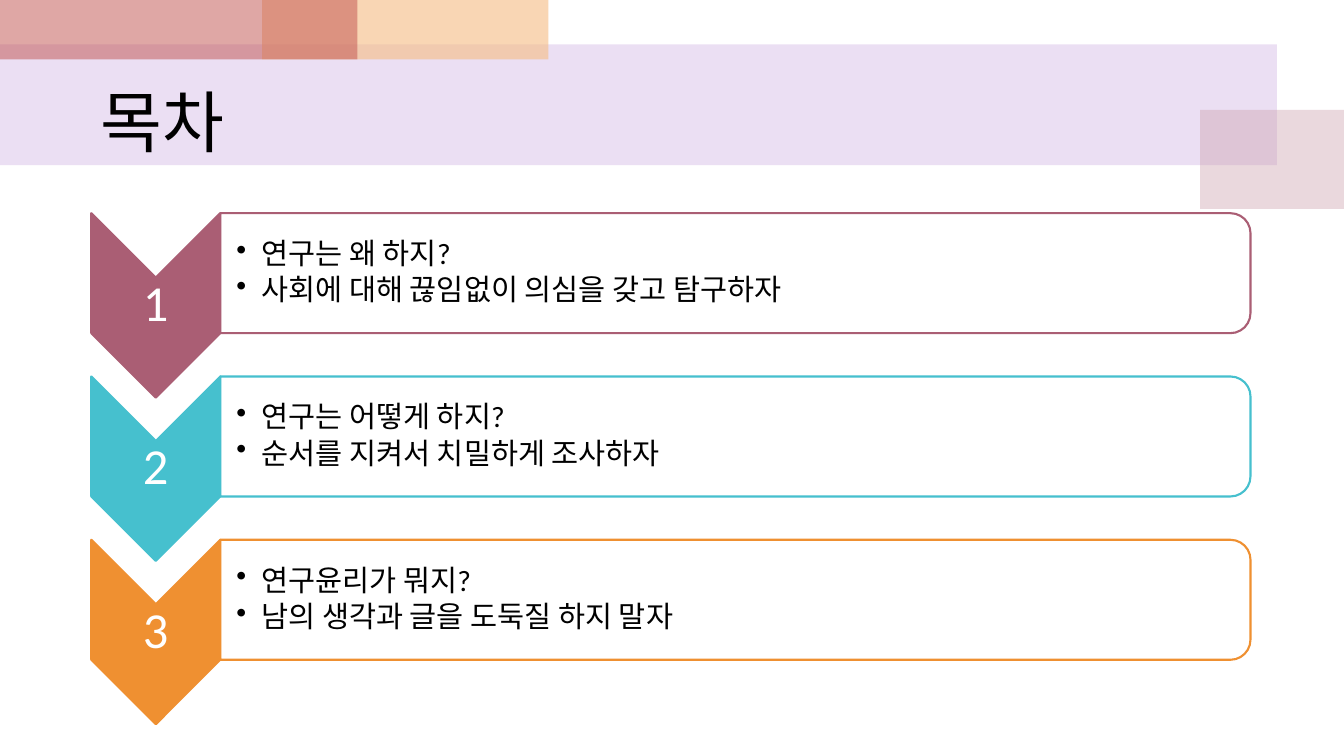
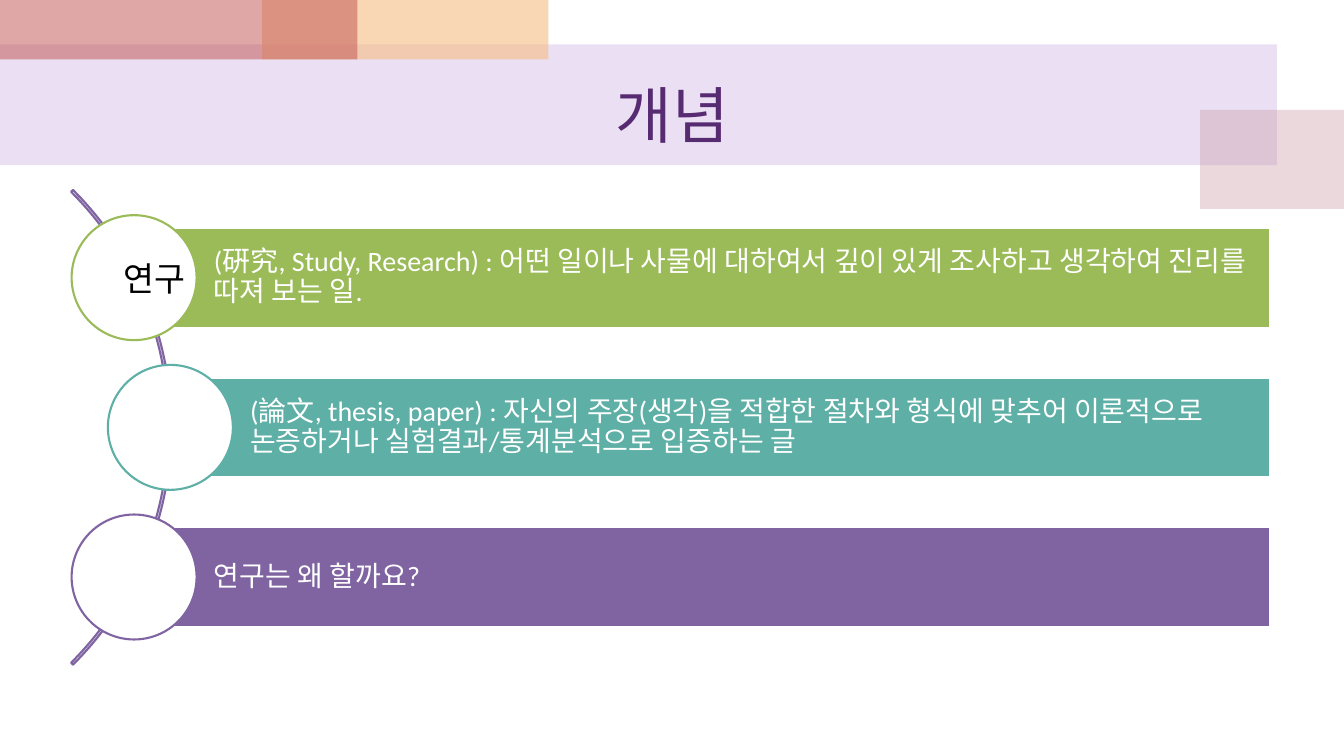
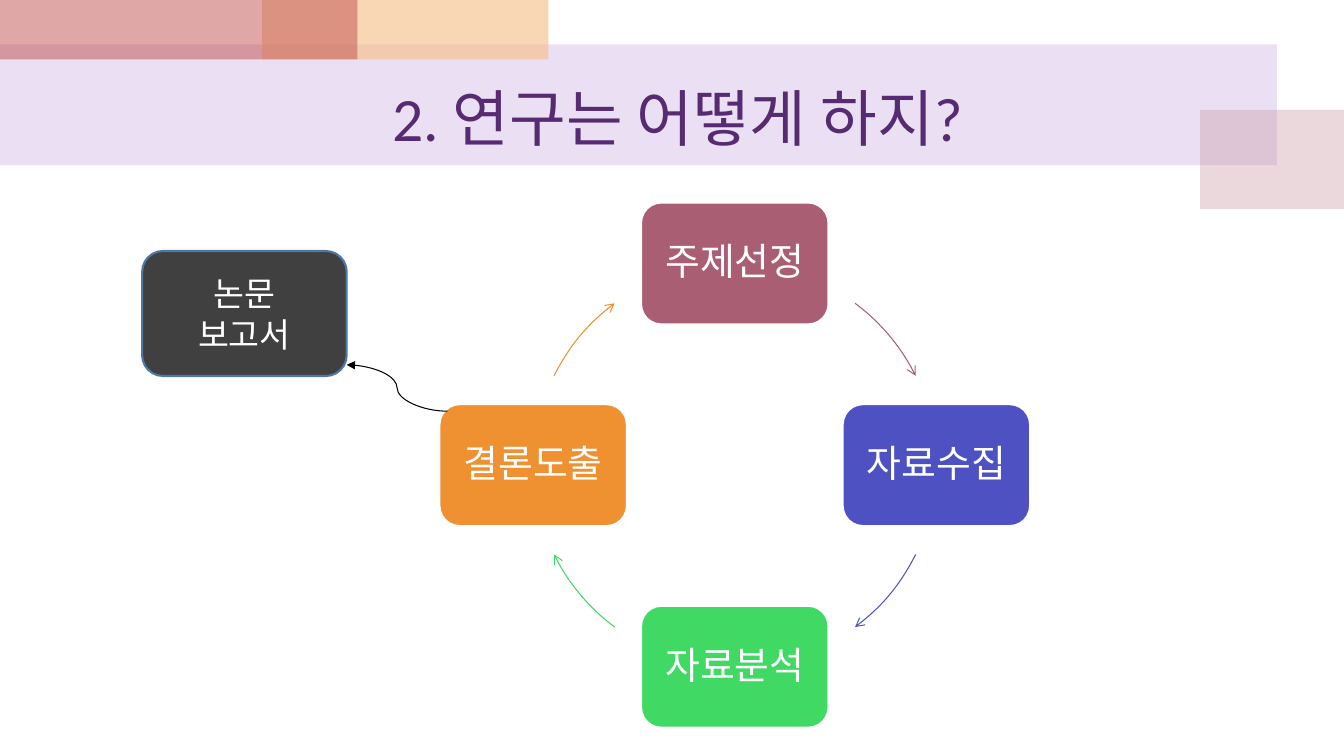
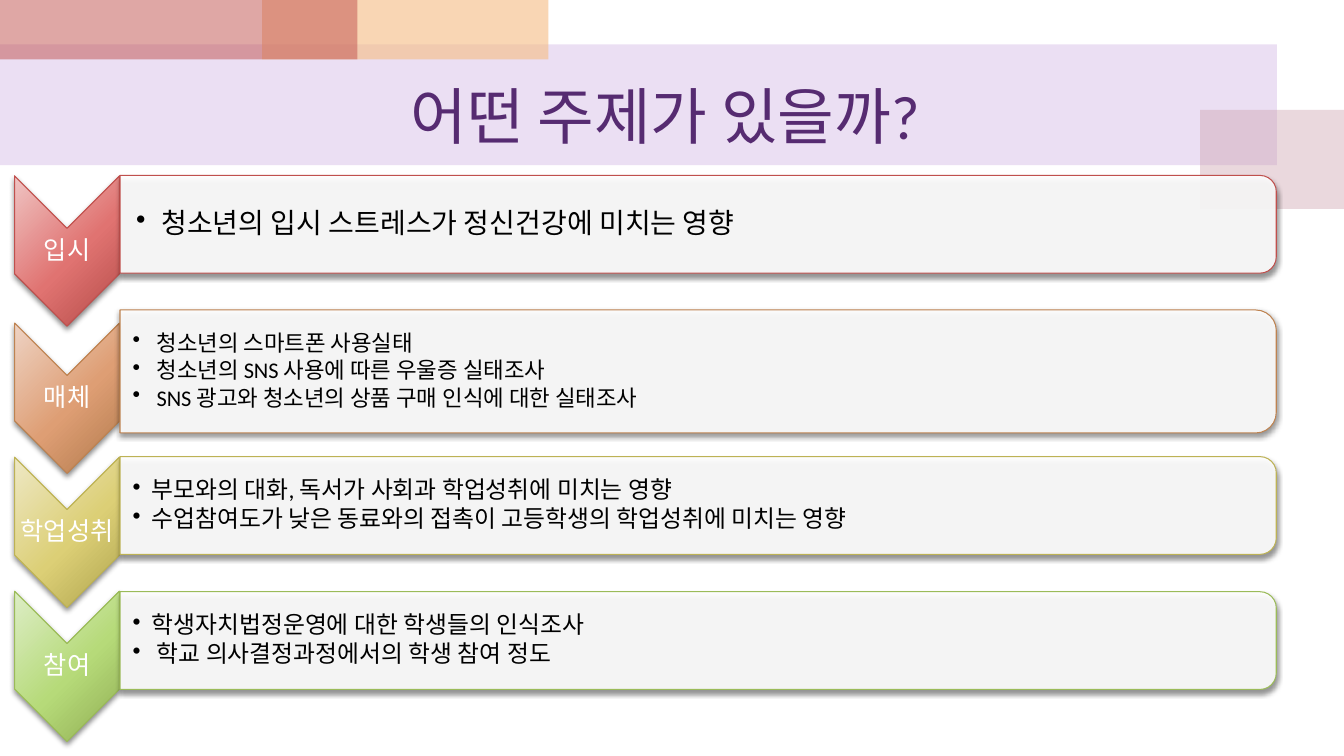
"""Build a four-slide Korean lesson on why and how to do research."""
from pptx import Presentation
from pptx import util as u
from pptx.dml.color import RGBColor
from pptx.enum import shapes, text
from pptx.oxml import parse_xml
from pptx.oxml.ns import nsdecls, qn

BLACK = RGBColor(0x00, 0x00, 0x00)
WHITE = RGBColor(0xFF, 0xFF, 0xFF)
CHARCOAL = RGBColor(0x40, 0x40, 0x40)
STEEL = RGBColor(0x4F, 0x78, 0xA5)
PLUM = RGBColor(0x56, 0x2B, 0x71)
LILAC = RGBColor(0xBF, 0x98, 0xD8)
ROSE = RGBColor(0xCC, 0x9E, 0xAC)
PEACH = RGBColor(0xF5, 0xBC, 0x83)
RED = RGBColor(0xC0, 0x50, 0x4D)
WINE = RGBColor(0xAA, 0x5E, 0x74)
CYAN = RGBColor(0x46, 0xC0, 0xCE)
ORANGE = RGBColor(0xEF, 0x90, 0x31)
OLIVE = RGBColor(0x9B, 0xBB, 0x59)
TEAL = RGBColor(0x5E, 0xAF, 0xA6)
PURPLE = RGBColor(0x80, 0x64, 0xA2)
INDIGO = RGBColor(0x4E, 0x51, 0xC2)
GREEN = RGBColor(0x3F, 0xD9, 0x63)
BROWN = RGBColor(0xBE, 0x83, 0x51)
MUSTARD = RGBColor(0xBD, 0xB2, 0x55)

KIND = shapes.MSO_SHAPE
CENTER = text.PP_ALIGN.CENTER
LEFT = text.PP_ALIGN.LEFT
MIDDLE = text.MSO_ANCHOR.MIDDLE
TOP = text.MSO_ANCHOR.TOP

deck = Presentation()
deck.slide_width, deck.slide_height = u.Inches(13.333), u.Inches(7.5)
COL, ROW = deck.slide_width / 100, deck.slide_height / 100
blank = deck.slide_layouts[6]


def draw(page, kind, at, fill=None, line=None, weight=1.5, alpha=100, turn=0):
    """Add a shape that covers a box given in percent of the slide, even when turned."""
    left, top, width, height = at[0] * COL, at[1] * ROW, at[2] * COL, at[3] * ROW
    if turn:
        left, top = left + (width - height) / 2, top + (height - width) / 2
        width, height = height, width
    box = page.shapes.add_shape(kind, int(left), int(top), int(width), int(height))
    box.rotation = turn
    box.shadow.inherit = False
    if fill is None:
        box.fill.background()
    else:
        box.fill.solid()
        box.fill.fore_color.rgb = fill
        if alpha < 100:
            color = box.element.spPr.find(qn("a:solidFill"))[0]
            color.append(parse_xml(f'<a:alpha {nsdecls("a")} val="{alpha * 1000}"/>'))
    if line is None:
        box.line.fill.background()
    else:
        box.line.color.rgb = line
        box.line.width = u.Pt(weight)
    return box


def write(box, lines, size, color, align=CENTER, anchor=MIDDLE, inset=None, spacing=0.9, indent=0):
    """Fill a shape with paragraphs, bulleted when an indent is given."""
    frame = box.text_frame
    sides = inset or (7.2, 3.6, 7.2, 3.6)
    margins = zip(("margin_left", "margin_top", "margin_right", "margin_bottom"), map(u.Pt, sides))
    for name, value in {"word_wrap": True, "vertical_anchor": anchor, **dict(margins)}.items():
        setattr(frame, name, value)
    for number, line in enumerate(lines):
        para = frame.add_paragraph() if number else frame.paragraphs[0]
        para.alignment, para.line_spacing = align, spacing
        if indent:
            para.space_after = u.Pt(round(size * 0.15, 1))
            props = para._p.get_or_add_pPr()
            props.set("marL", str(u.Pt(indent)))
            props.set("indent", str(-u.Pt(indent)))
            props.append(parse_xml(f'<a:buChar {nsdecls("a")} char="•"/>'))
        span = para.add_run()
        span.text = line
        for name, value in {"name": "Calibri", "size": u.Pt(size)}.items():
            setattr(span.font, name, value)
        span.font.color.rgb = color


contents, concept, process, topics = [deck.slides.add_slide(blank) for _ in range(4)]

for at, fill, alpha in [
    ((0, 5.87, 95, 16), LILAC, 30),
    ((89.3, 14.55, 10.7, 13.1), ROSE, 40),
    ((19.5, 0, 21.3, 7.87), PEACH, 60),
    ((0, 0, 26.6, 7.87), RED, 50),
]:
    band = draw(contents, KIND.RECTANGLE, at, fill, alpha=alpha)
    blank.shapes.element.append(band.element)

for page, title, at, size, color, align, anchor in [
    (contents, "목차", (6.75, 10, 11.93, 12.13), 48, BLACK, LEFT, TOP),
    (concept, "개념", (6.9, 8.93, 86.25, 12.13), 44, PLUM, CENTER, MIDDLE),
    (process, "2. 연구는 어떻게 하지? ", (7.8, 5.73, 86.25, 19.33), 44, PLUM, CENTER, MIDDLE),
    (topics, "어떤 주제가 있을까? ", (6.9, 9.07, 86.25, 12.27), 44, PLUM, CENTER, MIDDLE),
]:
    heading = page.shapes.add_textbox(
        int(at[0] * COL), int(at[1] * ROW), int(at[2] * COL), int(at[3] * ROW))
    write(heading, [title], size, color, align, anchor, spacing=1)

for step, (color, lines) in enumerate([
    (WINE, ["연구는 왜 하지?", "사회에 대해 끊임없이 의심을 갖고 탐구하자"]),
    (CYAN, ["연구는 어떻게 하지?", "순서를 지켜서 치밀하게 조사하자"]),
    (ORANGE, ["연구윤리가 뭐지?", "남의 생각과 글을 도둑질 하지 말자"]),
]):
    top = 28.2 + step * 21.6
    arrow_at, bar_at = (6.79, top, 9.6, 24.4), (16.39, top, 76.65, 15.87)
    draw(contents, KIND.CHEVRON, arrow_at, color, color, turn=90)
    write(draw(contents, KIND.RECTANGLE, arrow_at), [str(step + 1)], 36, WHITE, inset=(2, 2, 2, 2))
    draw(contents, KIND.ROUND_2_SAME_RECTANGLE, bar_at, WHITE, color, alpha=90, turn=90)
    write(draw(contents, KIND.RECTANGLE, bar_at), lines, 21, BLACK, LEFT,
          inset=(11.5, 1, 1, 1), indent=18)

arc = draw(concept, KIND.BLOCK_ARC, (-37.2, 12.13, 49.95, 88.8), line=PURPLE)
for number, value in enumerate((189, 27, 0.004)):
    arc.adjustments[number] = value
for step, (left, color, line) in enumerate([
    (9.98, OLIVE, "(硏究, Study, Research) : 어떤 일이나 사물에 대하여서 깊이 있게 조사하고 생각하여 진리를 따져 보는 일."),
    (12.68, TEAL, "(論文, thesis, paper) : 자신의 주장(생각)을 적합한 절차와 형식에 맞추어 이론적으로 논증하거나 실험결과/통계분석으로 입증하는 글"),
    (9.98, PURPLE, "연구는 왜 할까요?"),
]):
    top = 30.13 + step * 19.8
    bar = draw(concept, KIND.RECTANGLE, (left, top, 94.5 - left, 13.2), color, WHITE)
    write(bar, [line], 20, WHITE, LEFT, inset=(57, 4.3, 4.3, 4.3))
    draw(concept, KIND.OVAL, (left - 4.65, top - 1.67, 9.3, 16.53), WHITE, color)
label = draw(concept, KIND.RECTANGLE, (6.68, 33.47, 9.6, 6.67))
write(label, ["연구"], 24, BLACK, anchor=TOP, spacing=1)

CENTER_X, CENTER_Y, REACH_X, REACH_Y = 54.68, 61.53, 15, 26.67
for stage, color, across, down, start, end in [
    ("주제선정", WINE, 0, -1, 306.6, 333.7),
    ("자료수집", INDIGO, 1, 0, 26.3, 53.4),
    ("자료분석", GREEN, 0, 1, 126.6, 153.7),
    ("결론도출", ORANGE, -1, 0, 206.3, 233.4),
]:
    at = (CENTER_X + across * REACH_X - 6.98, CENTER_Y + down * REACH_Y - 8.07, 13.95, 16.13)
    write(draw(process, KIND.ROUNDED_RECTANGLE, at, color, WHITE), [stage], 27, WHITE)
    ring = (CENTER_X - REACH_X, CENTER_Y - REACH_Y, 2 * REACH_X, 2 * REACH_Y)
    arrow = draw(process, KIND.ARC, ring, line=color, weight=0.75)
    arrow.adjustments[0], arrow.adjustments[1] = start * 0.6, end * 0.6
    arrow.element.spPr.find(qn("a:ln")).append(
        parse_xml(f'<a:tailEnd {nsdecls("a")} type="arrow"/>'))
report = draw(process, KIND.ROUNDED_RECTANGLE, (10.58, 33.2, 15.22, 16.53), CHARCOAL, STEEL)
write(report, ["논문", "보고서"], 24, WHITE, spacing=1)
link = process.shapes.add_connector(
    shapes.MSO_CONNECTOR.CURVE, int(33.3 * COL), int(54.4 * ROW), int(25.8 * COL), int(48.27 * ROW))
link.line.color.rgb, link.line.width = BLACK, u.Pt(0.75)
link.element.spPr.find(qn("a:ln")).append(
    parse_xml(f'<a:tailEnd {nsdecls("a")} type="triangle"/>'))
link.element.spPr.append(parse_xml(f'<a:effectLst {nsdecls("a")}/>'))

for name, color, shades, arrow_top, top, height, size, inset, indent, lines in [
    ("입시", RED, ("EFC4C3", "E07371", "B34B48"), 23.27, 23.2, 12.93, 20, 11.5, 18,
     ["청소년의 입시 스트레스가 정신건강에 미치는 영향"]),
    ("매체", BROWN, ("EED3C4", "DE9E74", "B17A4C"), 42.73, 41, 16.27, 16, 9, 13.5,
     [" 청소년의 스마트폰 사용실태", " 청소년의 SNS 사용에 따른 우울증 실태조사",
      " SNS 광고와 청소년의 상품 구매 인식에 대한 실태조사"]),
    ("학업성취", MUSTARD, ("EEE8C5", "DCCF76", "B0A54F"), 60.47, 60.4, 12.93, 17, 9, 13.5,
     ["부모와의 대화, 독서가 사회과 학업성취에 미치는 영향",
      "수업참여도가 낮은 동료와의 접촉이 고등학생의 학업성취에 미치는 영향"]),
    ("참여", OLIVE, ("DDEDC6", "B6DA79", "90AE53"), 78.2, 78.27, 12.93, 17, 9, 13.5,
     ["학생자치법정운영에 대한 학생들의 인식조사", " 학교 의사결정과정에서의 학생 참여 정도"]),
]:
    arrow_at, bar_at = (1.09, arrow_top, 7.8, 19.87), (8.93, top, 86.03, height)
    arrow = draw(topics, KIND.CHEVRON, arrow_at, line=color, weight=0.75, turn=90)
    stops = "".join(f'<a:gs pos="{place}"><a:srgbClr val="{shade}"/></a:gs>'
                    for place, shade in zip((0, 55000, 100000), shades))
    props = arrow.element.spPr
    props.replace(props.find(qn("a:noFill")), parse_xml(
        f'<a:gradFill {nsdecls("a")} rotWithShape="0"><a:gsLst>{stops}</a:gsLst><a:path path="circle">'
        '<a:fillToRect l="-40000" t="-90000" r="140000" b="190000"/></a:path></a:gradFill>'))
    write(draw(topics, KIND.RECTANGLE, arrow_at), [name], 18, WHITE, inset=(1, 1, 1, 1))
    bar = draw(topics, KIND.ROUND_2_SAME_RECTANGLE, bar_at, WHITE, color, 0.75, 90, 90)
    write(draw(topics, KIND.RECTANGLE, bar_at), lines, size, BLACK, LEFT,
          inset=(inset, 1, 1, 1), indent=indent)
    for box in (arrow, bar):
        box.element.spPr.find(qn("a:effectLst")).append(parse_xml(
            f'<a:outerShdw {nsdecls("a")} blurRad="{u.Pt(4)}" dist="{u.Pt(2)}" dir="5400000" '
            'rotWithShape="0"><a:srgbClr val="000000"><a:alpha val="45000"/></a:srgbClr></a:outerShdw>'))

deck.save("out.pptx")
